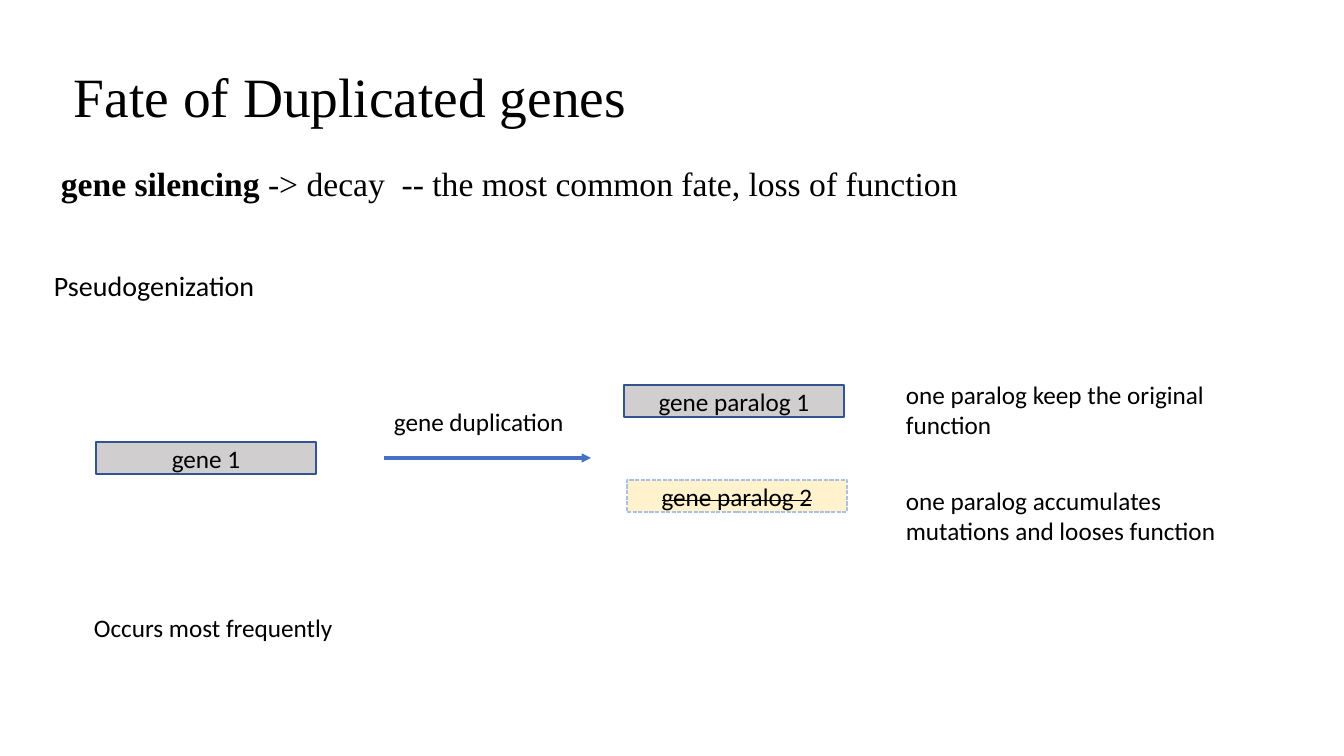
import pptx
import pptx.dml.color
import pptx.enum.dml
import pptx.enum.shapes
import pptx.enum.text
import pptx.oxml.ns
import pptx.util
from lxml import etree

PX = 12192000 / 1344
THEME = {
    "ink": "000000", "gene": "D0CECE", "gene_edge": "325491",
    "lost": "FFF2CC", "lost_edge": "ABC0E4", "arrow": "4472C4",
    "serif": "Times New Roman", "sans": "Calibri",
    "title": 39.6, "lead": 24, "heading": 20, "body": 18,
}
ANCHOR = pptx.enum.text.MSO_ANCHOR
FIT = pptx.enum.text.MSO_AUTO_SIZE


def px(*lengths):
    return [pptx.util.Emu(round(length * PX)) for length in lengths]


def write(frame, pieces, face, size, **frame_format):
    for key, value in frame_format.items():
        setattr(frame, key, value)
    for words, extra in pieces:
        run = frame.paragraphs[0].add_run()
        run.text = words
        run.font.color.rgb = pptx.dml.color.RGBColor.from_string(THEME["ink"])
        font_format = {"name": THEME[face], "size": pptx.util.Pt(THEME[size])}
        for key, value in {**font_format, **extra}.items():
            setattr(run.font, key, value)
    return frame.paragraphs[0]


deck = pptx.Presentation()
deck.slide_width, deck.slide_height = px(1344, 756)
slide = deck.slides.add_slide(deck.slide_layouts[6])

title = slide.shapes.add_textbox(*px(64, 32, 1142, 126))
write(title.text_frame, [("Fate of Duplicated genes", {})], "serif", "title",
      word_wrap=True, vertical_anchor=ANCHOR.MIDDLE)

silencing = slide.shapes.add_textbox(*px(51, 158, 1093, 92))
write(silencing.text_frame,
      [("gene silencing ", {"bold": True}),
       ("-> decay  -- the most common fate, loss of function", {})],
      "serif", "lead", word_wrap=True)

remarks = [
    ("Pseudogenization", (44, 264, 223, 44), "heading", False),
    ("gene duplication", (384, 401, 193, 40), "body", True),
    ("one paralog keep the original function", (896, 374, 359, 102), "body", True),
    ("one paralog accumulates mutations and looses function",
     (896, 480, 359, 72), "body", True),
    ("Occurs most frequently", (84, 607, 267, 40), "body", False),
]
for words, place, size, wraps in remarks:
    remark = slide.shapes.add_textbox(*px(*place))
    write(remark.text_frame, [(words, {})], "sans", size, word_wrap=wraps,
          auto_size=FIT.NONE if wraps else FIT.SHAPE_TO_FIT_TEXT)

genes = [
    ("gene 1", 96, 442, False),
    ("gene paralog 1", 624, 385, False),
    ("gene paralog 2", 627, 480, True),
]
for label, left, top, silenced in genes:
    gene = slide.shapes.add_shape(
        pptx.enum.shapes.MSO_SHAPE.RECTANGLE, *px(left, top, 220, 32))
    gene.shadow.inherit = False
    state = "lost" if silenced else "gene"
    gene.fill.solid()
    gene.fill.fore_color.rgb = pptx.dml.color.RGBColor.from_string(THEME[state])
    gene.line.color.rgb = pptx.dml.color.RGBColor.from_string(THEME[state + "_edge"])
    gene.line.width = pptx.util.Pt(1)
    caption = write(gene.text_frame, [(label, {})], "sans", "body",
                    word_wrap=True, vertical_anchor=ANCHOR.MIDDLE)
    caption.alignment = pptx.enum.text.PP_ALIGN.CENTER
    if silenced:
        gene.line.dash_style = pptx.enum.dml.MSO_LINE.SQUARE_DOT
        caption.runs[0]._r.get_or_add_rPr().set("strike", "sngStrike")

duplication = slide.shapes.add_connector(
    pptx.enum.shapes.MSO_CONNECTOR.STRAIGHT, *px(384, 458, 591, 458))
duplication.line.color.rgb = pptx.dml.color.RGBColor.from_string(THEME["arrow"])
duplication.line.width = pptx.util.Pt(2.25)
etree.SubElement(duplication.line._get_or_add_ln(),
                 pptx.oxml.ns.qn("a:tailEnd"), type="triangle")
etree.SubElement(duplication._element.spPr, pptx.oxml.ns.qn("a:effectLst"))

deck.save("out.pptx")
